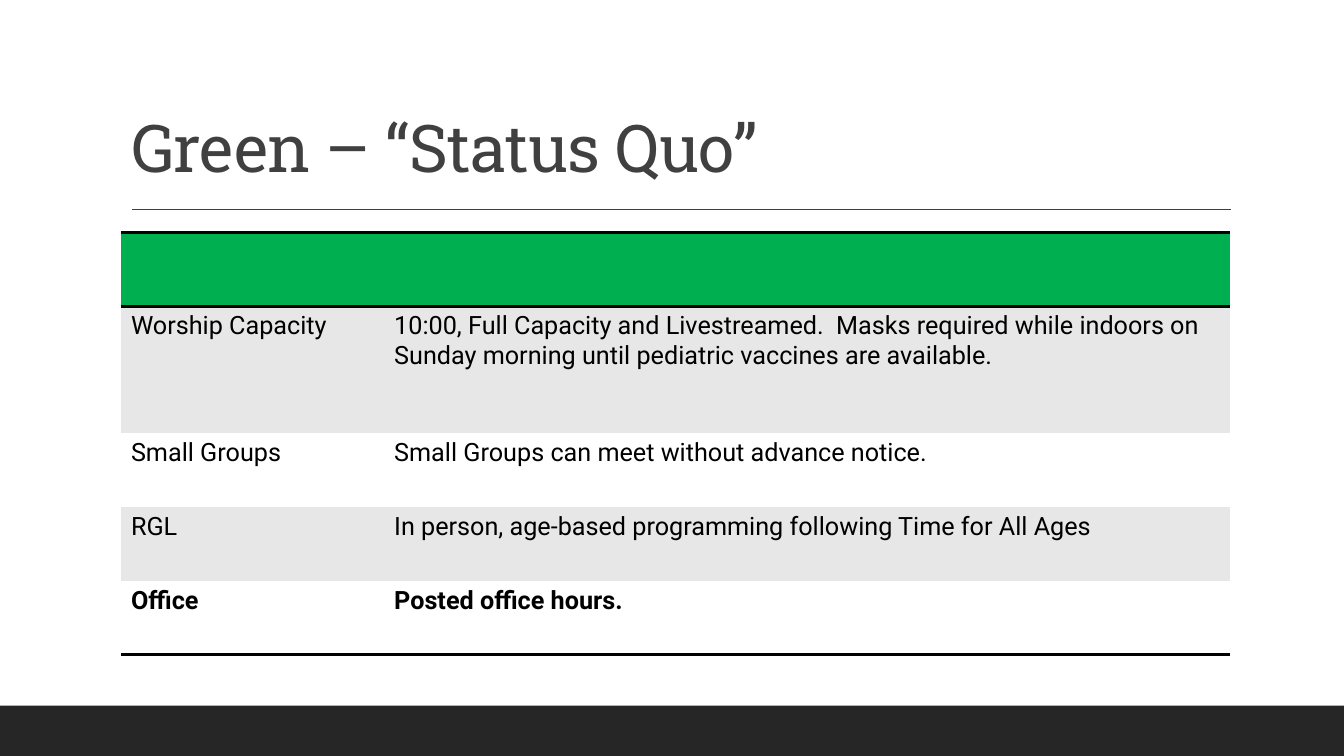
from dataclasses import dataclass

from lxml import etree
from pptx import Presentation
from pptx import util as u
from pptx.dml.color import RGBColor
from pptx.enum import shapes, text
from pptx.oxml import ns
from pptx.slide import Slide
from pptx.table import _Cell
from pptx.text.text import Font

NO_STYLE_NO_GRID = "{2D5ABB26-0587-4C30-8999-92F81FD0307C}"


@dataclass(frozen=True)
class Theme:
    title_font: str = "Roboto Slab"
    body_font: str = "Roboto"
    title_size: float = 47
    body_size: float = 18
    title_color: str = "404040"
    text_color: str = "000000"
    footer_color: str = "262626"
    header_fill: str = "00B050"
    band_fills: tuple[str, str] = ("E7E7E7", "FFFFFF")
    border_width: float = 2


@dataclass(frozen=True)
class Row:
    label: str
    detail: str
    height: float = 52.7
    bold: bool = False
    borders: tuple[str, ...] = ()


THEME = Theme()
LEFT, WIDTH = 86.4, 792
COLUMN_WIDTHS = (188, 604)
ROWS = (
    Row("", "", borders=("T", "B")),
    Row(
        "Worship Capacity",
        "10:00, Full Capacity and Livestreamed.  Masks required while indoors on "
        "Sunday morning until pediatric vaccines are available.",
        height=90.7,
    ),
    Row("Small Groups", "Small Groups can meet without advance notice."),
    Row("RGL", "In person, age-based programming following Time for All Ages"),
    Row("Office", "Posted office hours.", bold=True, borders=("B",)),
)


def rgb(color: str) -> RGBColor:
    return RGBColor.from_string(color)


def format_font(font: Font, name: str, size: float, color: str, bold: bool = False) -> None:
    font.name = name
    font.size = u.Pt(size)
    font.color.rgb = rgb(color)
    font.bold = bold


def add_footer_band(slide: Slide) -> None:
    band = slide.shapes.add_shape(
        shapes.MSO_SHAPE.RECTANGLE, u.Pt(0), u.Pt(504), u.Pt(960), u.Pt(36)
    )
    band.shadow.inherit = False
    band.fill.solid()
    band.fill.fore_color.rgb = rgb(THEME.footer_color)
    band.line.fill.background()


def add_title_rule(slide: Slide) -> None:
    rule = slide.shapes.add_connector(
        shapes.MSO_CONNECTOR.STRAIGHT, u.Pt(94.3), u.Pt(149.5), u.Pt(879), u.Pt(149.5)
    )
    rule.line.color.rgb = rgb(THEME.title_color)
    rule.line.width = u.Pt(1)
    etree.SubElement(rule._element.spPr, ns.qn("a:effectLst"))


def set_title(slide: Slide, wording: str) -> None:
    title = slide.shapes.title
    title.left, title.top = u.Pt(LEFT), u.Pt(22.3)
    title.width, title.height = u.Pt(WIDTH), u.Pt(114.5)
    frame = title.text_frame
    frame.text = wording
    frame.word_wrap = True
    frame.auto_size = text.MSO_AUTO_SIZE.NONE
    frame.vertical_anchor = text.MSO_ANCHOR.BOTTOM
    paragraph = frame.paragraphs[0]
    paragraph.alignment = text.PP_ALIGN.LEFT
    paragraph.line_spacing = 0.9
    font = paragraph.runs[0].font
    format_font(font, THEME.title_font, THEME.title_size, THEME.title_color)
    font._element.set("spc", "-50")


def add_border(cell: _Cell, side: str) -> None:
    """Draw one cell edge; side is T or B."""
    properties = cell._tc.get_or_add_tcPr()
    line = etree.SubElement(properties, ns.qn(f"a:ln{side}"), w=str(u.Pt(THEME.border_width)))
    fill = etree.SubElement(line, ns.qn("a:solidFill"))
    etree.SubElement(fill, ns.qn("a:srgbClr"), val=THEME.text_color)


def fill_cell(cell: _Cell, wording: str, row: Row, fill: str) -> None:
    for side in row.borders:
        add_border(cell, side)
    cell.fill.solid()
    cell.fill.fore_color.rgb = rgb(fill)
    cell.text_frame.text = wording
    for run in cell.text_frame.paragraphs[0].runs:
        format_font(run.font, THEME.body_font, THEME.body_size, THEME.text_color, row.bold)


def add_status_table(slide: Slide) -> None:
    frame = slide.shapes.add_table(
        len(ROWS), len(COLUMN_WIDTHS), u.Pt(LEFT), u.Pt(166.2),
        u.Pt(WIDTH), u.Pt(sum(row.height for row in ROWS)),
    )
    table = frame.table
    table.first_row = table.horz_banding = False
    table._tbl.tblPr.find(ns.qn("a:tableStyleId")).text = NO_STYLE_NO_GRID
    for column, width in zip(table.columns, COLUMN_WIDTHS):
        column.width = u.Pt(width)
    for index, row in enumerate(ROWS):
        table.rows[index].height = u.Pt(row.height)
        fill = THEME.band_fills[(index - 1) % 2] if index else THEME.header_fill
        for cell, wording in zip(table.rows[index].cells, (row.label, row.detail)):
            fill_cell(cell, wording, row, fill)


def main() -> None:
    presentation = Presentation()
    presentation.slide_width, presentation.slide_height = u.Pt(960), u.Pt(540)
    slide = presentation.slides.add_slide(presentation.slide_layouts.get_by_name("Title Only"))
    add_footer_band(slide)
    add_title_rule(slide)
    set_title(slide, "Green – “Status Quo”")
    add_status_table(slide)
    presentation.save("out.pptx")


if __name__ == "__main__":
    main()
